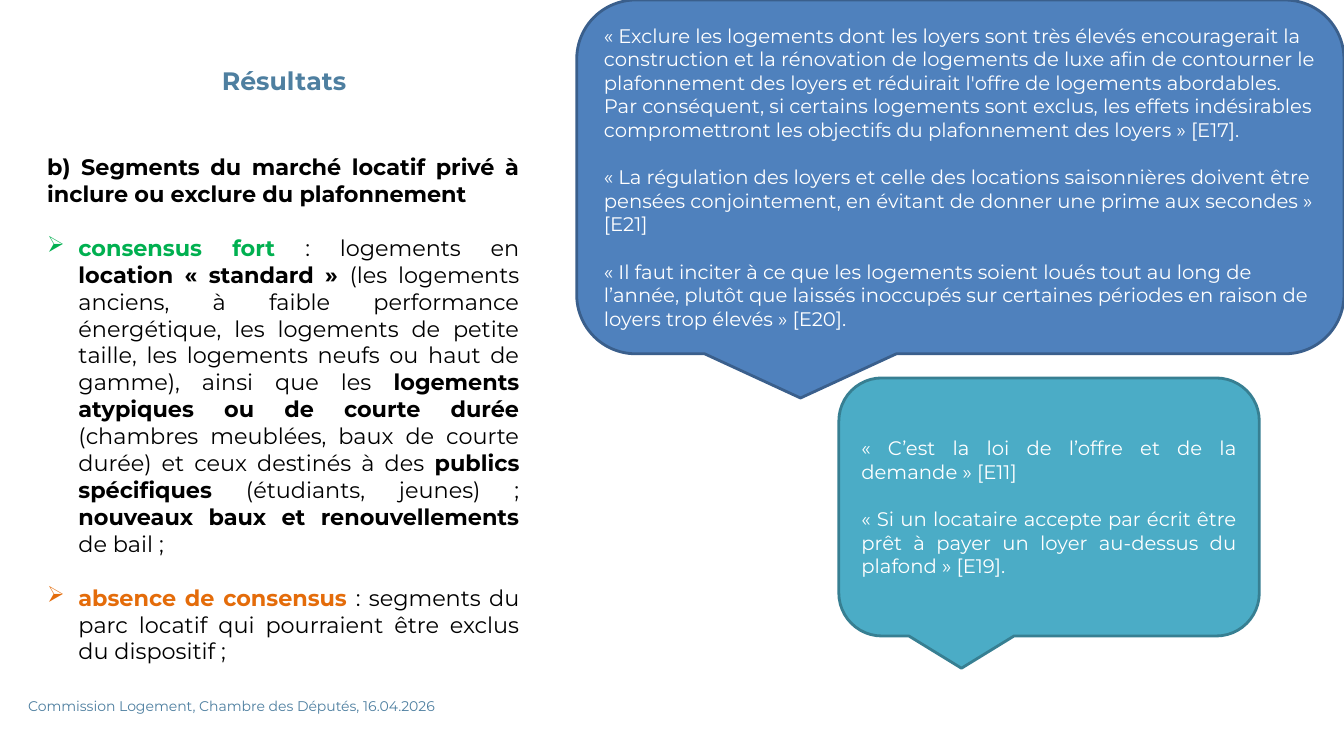
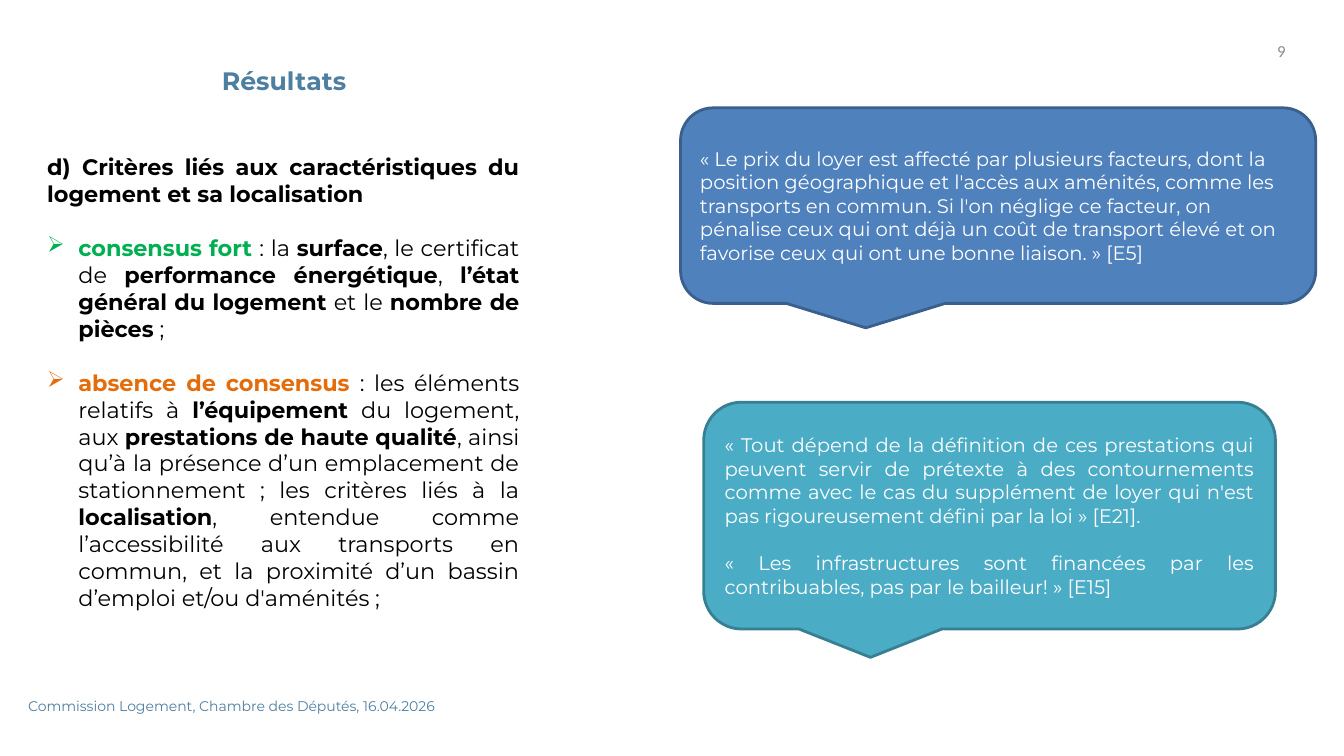
from pptx import Presentation
from pptx.dml.color import RGBColor
from pptx.enum.shapes import MSO_SHAPE as Shape
from pptx.enum.text import MSO_ANCHOR as Anchor, MSO_AUTO_SIZE as AutoSize, PP_ALIGN as Align
from pptx.util import Inches, Pt
from lxml.etree import SubElement
from pptx.oxml.ns import qn

# Shared look
TEXT_FONT = "Montserrat"
NUMBER_FONT = "Calibri"
STEEL = RGBColor(0x4E, 0x7F, 0xA0)
GREY = RGBColor(0x8C, 0x8C, 0x8C)
BLACK = RGBColor(0, 0, 0)
WHITE = RGBColor(0xFF, 0xFF, 0xFF)
GREEN = RGBColor(0x00, 0xB0, 0x50)
ORANGE = RGBColor(0xE4, 0x6C, 0x0A)
BLUE = RGBColor(0x4F, 0x81, 0xBD)
BLUE_EDGE = RGBColor(0x3A, 0x5F, 0x8C)
TEAL = RGBColor(0x4B, 0xAC, 0xC6)
TEAL_EDGE = RGBColor(0x37, 0x7F, 0x92)

LINE_HEIGHT = 1.22  # of the text size
BULLET_INDENT = Inches(0.31)
FOOTER = "Commission Logement, Chambre des Députés, 16.04.2026"

# Callout styles: fill, edge, alignment
BLUE_QUOTE = (BLUE, BLUE_EDGE, Align.LEFT)
TEAL_QUOTE = (TEAL, TEAL_EDGE, Align.JUSTIFY)

# Each point: lead-in, its colour, then (text, bold) spans
SLIDES = [
    {
        "heading": "b) Segments du marché locatif privé à inclure ou exclure du plafonnement",
        "points": [
            ("consensus fort ", GREEN, [
                (": logements en ", False),
                ("location « standard » ", True),
                ("(les logements anciens, à faible performance énergétique, les logements "
                 "de petite taille, les logements neufs ou haut de gamme), ainsi que les ", False),
                ("logements atypiques ou de courte durée", True),
                (" (chambres meublées, baux de courte durée) et ceux destinés à des ", False),
                ("publics spécifiques", True),
                (" (étudiants, jeunes) ; ", False),
                ("nouveaux baux et renouvellements ", True),
                ("de bail ;", False),
            ]),
            ("absence de consensus ", ORANGE, [
                (": segments du parc locatif qui pourraient être exclus du dispositif ;", False),
            ]),
        ],
        "quotes": [
            ((5.72, 0, 7.61, 3.51), BLUE_QUOTE, [
                "« Exclure les logements dont les loyers sont très élevés encouragerait la "
                "construction et la rénovation de logements de luxe afin de contourner le "
                "plafonnement des loyers et réduirait l'offre de logements abordables. Par "
                "conséquent, si certains logements sont exclus, les effets indésirables "
                "compromettront les objectifs du plafonnement des loyers » [E17].",
                "« La régulation des loyers et celle des locations saisonnières doivent être "
                "pensées conjointement, en évitant de donner une prime aux secondes » [E21]",
                "« Il faut inciter à ce que les logements soient loués tout au long de "
                "l’année, plutôt que laissés inoccupés sur certaines périodes en raison de "
                "loyers trop élevés » [E20].",
            ]),
            ((8.32, 3.75, 4.17, 2.56), TEAL_QUOTE, [
                "« C’est la loi de l’offre et de la demande » [E11]",
                "« Si un locataire accepte par écrit être prêt à payer un loyer au-dessus "
                "du plafond » [E19].",
            ]),
        ],
    },
    {
        "number": "9",
        "heading": "d) Critères liés aux caractéristiques du logement et sa localisation",
        "points": [
            ("consensus fort ", GREEN, [
                (": la ", False),
                ("surface", True),
                (", le certificat de ", False),
                ("performance énergétique", True),
                (", ", False),
                ("l’état général du logement", True),
                (" et le ", False),
                ("nombre de pièces", True),
                (" ;", False),
            ]),
            ("absence de consensus ", ORANGE, [
                (": les éléments relatifs à ", False),
                ("l’équipement", True),
                (" du logement, aux ", False),
                ("prestations de haute qualité", True),
                (", ainsi qu’à la présence d’un emplacement de stationnement ; les critères "
                 "liés à la ", False),
                ("localisation", True),
                (", entendue comme l’accessibilité aux transports en commun, et la proximité "
                 "d’un bassin d’emploi et/ou d'aménités ;", False),
            ]),
        ],
        "quotes": [
            ((6.75, 1.07, 6.3, 1.94), BLUE_QUOTE, [
                "« Le prix du loyer est affecté par plusieurs facteurs, dont la position "
                "géographique et l'accès aux aménités, comme les transports en commun. Si l'on "
                "néglige ce facteur, on pénalise ceux qui ont déjà un coût de transport élevé "
                "et on favorise ceux qui ont une bonne liaison. » [E5]",
            ]),
            ((6.98, 3.99, 5.67, 2.25), TEAL_QUOTE, [
                "« Tout dépend de la définition de ces prestations qui peuvent servir de "
                "prétexte à des contournements comme avec le cas du supplément de loyer qui "
                "n'est pas rigoureusement défini par la loi » [E21].",
                "« Les infrastructures sont financées par les contribuables, pas par le "
                "bailleur! » [E15]",
            ]),
        ],
    },
]


def inches(box):
    return [Inches(length) for length in box]


def add_span(para, text, size, color, bold=False, font=TEXT_FONT):
    span = para.add_run()
    span.text = text
    span.font.name = font
    span.font.size = Pt(size)
    span.font.bold = bold
    span.font.color.rgb = color


def next_para(frame, size, align):
    """Use the empty first paragraph, or add one a blank line below."""
    para = frame.paragraphs[0]
    if para.runs:
        para = frame.add_paragraph()
        para.space_before = Pt(round(size * LINE_HEIGHT, 1))
    para.alignment = align
    return para


def add_bullet(para, color):
    props = para._p.get_or_add_pPr()
    props.set("marL", str(BULLET_INDENT))
    props.set("indent", str(-BULLET_INDENT))
    tint = SubElement(props, qn("a:buClr"))
    SubElement(tint, qn("a:srgbClr")).set("val", str(color))
    SubElement(props, qn("a:buChar")).set("char", "➢")


def add_textbox(page, box):
    frame = page.shapes.add_textbox(*inches(box)).text_frame
    frame.word_wrap = True
    return frame


def set_title(page, box):
    title = page.shapes.title
    title.left, title.top, title.width, title.height = inches(box)
    frame = title.text_frame
    frame.auto_size = AutoSize.NONE
    frame.vertical_anchor = Anchor.TOP
    add_span(next_para(frame, 18, Align.LEFT), "Résultats", 18, STEEL, bold=True)


def add_footer(page, box):
    para = next_para(add_textbox(page, box), 10, Align.LEFT)
    add_span(para, FOOTER, 10, STEEL)


def add_page_number(page, box, number):
    frame = add_textbox(page, box)
    frame.vertical_anchor = Anchor.MIDDLE
    add_span(next_para(frame, 12, Align.RIGHT), number, 12, GREY, font=NUMBER_FONT)


def add_findings(page, box, heading, points):
    frame = add_textbox(page, box)
    add_span(next_para(frame, 16, Align.JUSTIFY), heading, 16, BLACK, bold=True)
    for lead, color, spans in points:
        para = next_para(frame, 16, Align.JUSTIFY)
        add_bullet(para, color)
        add_span(para, lead, 16, color, bold=True)
        for text, bold in spans:
            add_span(para, text, 16, BLACK, bold)


def add_quotes(page, box, style, quotes):
    fill, edge, align = style
    callout = page.shapes.add_shape(Shape.ROUNDED_RECTANGULAR_CALLOUT, *inches(box))
    callout.shadow.inherit = False
    callout.fill.solid()
    callout.fill.fore_color.rgb = fill
    callout.line.color.rgb = edge
    callout.line.width = Pt(2)
    frame = callout.text_frame
    frame.word_wrap = True
    frame.vertical_anchor = Anchor.MIDDLE
    for quote in quotes:
        add_span(next_para(frame, 14, align), quote, 14, WHITE)


def add_results_page(deck, content):
    page = deck.slides.add_slide(deck.slide_layouts[5])
    set_title(page, (2.1, 0.6, 11.2, 0.4))
    add_footer(page, (0.18, 6.87, 7.98, 0.27))
    if "number" in content:
        add_page_number(page, (9.74, 0.3, 3.11, 0.4), content["number"])
    add_findings(page, (0.37, 1.47, 4.88, 5.3), content["heading"], content["points"])
    for box, style, quotes in content["quotes"]:
        add_quotes(page, box, style, quotes)


def main():
    deck = Presentation()
    deck.slide_width, deck.slide_height = Inches(13.33), Inches(7.5)
    for content in SLIDES:
        add_results_page(deck, content)
    deck.save("out.pptx")


if __name__ == "__main__":
    main()
